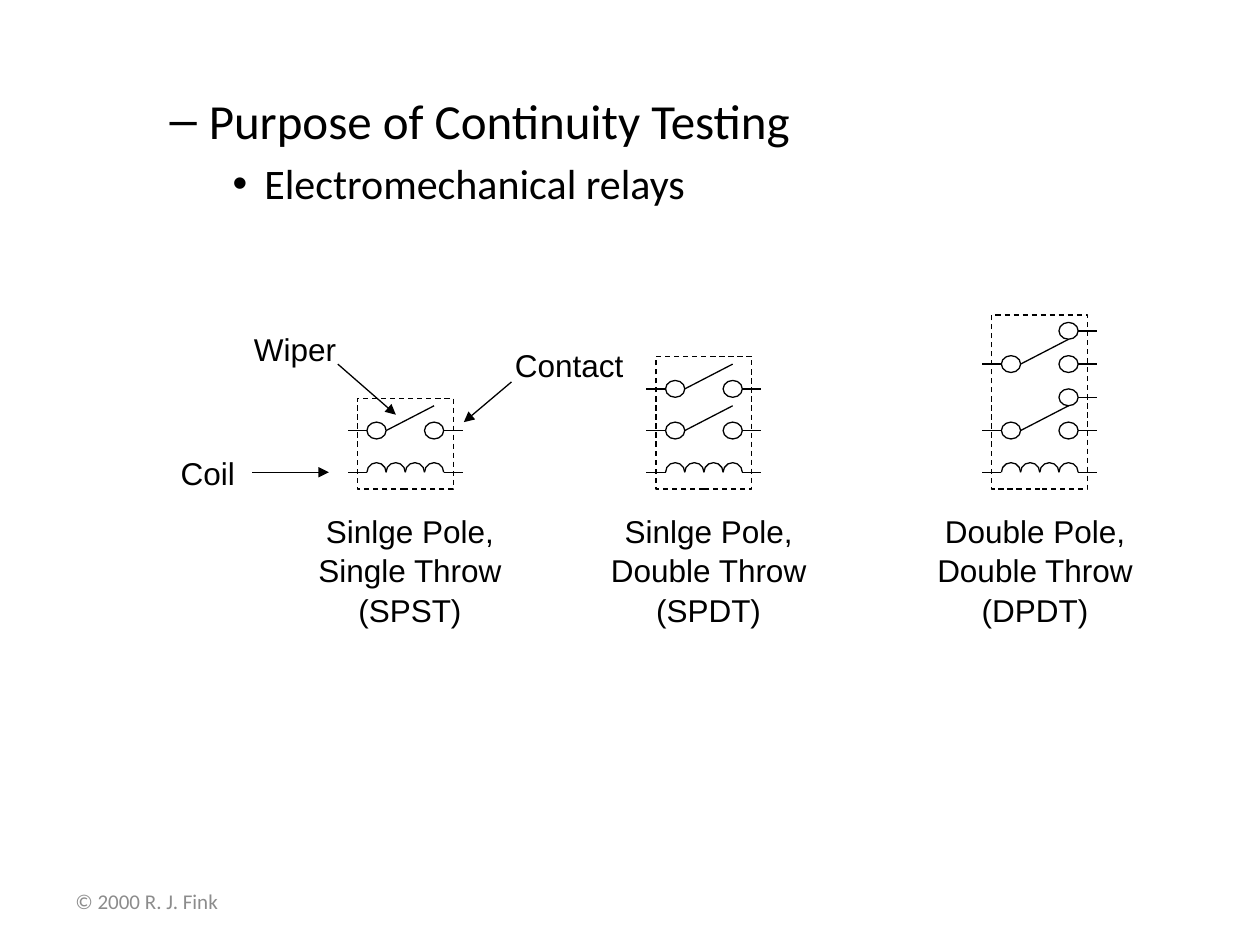
from lxml.etree import SubElement
from pptx import Presentation
from pptx.dml.color import RGBColor
from pptx.enum.dml import MSO_LINE
from pptx.enum.shapes import MSO_CONNECTOR, MSO_SHAPE
from pptx.enum.text import MSO_ANCHOR, PP_ALIGN
from pptx.oxml.ns import qn
from pptx.util import Cm, Pt

BLACK = "000000"
GREY = "8C8C8C"

# Relay geometry in cm; a relay is six units wide
UNIT = 2.32 / 6
RELAY_WIDTH = 6 * UNIT
CASE_BOTTOM = 9.86
COIL_RISE = 0.34       # coil axis above the bottom of the case
POLE_RISE = 1.18       # lowest pole above the bottom of the case
CONTACT_HEIGHT = 0.34
WIPER_RISE = 0.5
THROW_RISE = 0.67      # upper contact above its pole


def rgb(color):
    return RGBColor.from_string(color)


def style_line(line):
    line.color.rgb = rgb(BLACK)
    line.width = Pt(0.75)


def add_line(slide, x1, y1, x2, y2, arrow=False):
    connector = slide.shapes.add_connector(
        MSO_CONNECTOR.STRAIGHT, Cm(x1), Cm(y1), Cm(x2), Cm(y2))
    style_line(connector.line)
    properties = connector._element.spPr
    if arrow:
        SubElement(properties.get_or_add_ln(), qn("a:tailEnd"), type="triangle")
    SubElement(properties, qn("a:effectLst"))


def add_outline(slide, kind, left, top, width, height):
    outline = slide.shapes.add_shape(
        kind, Cm(left), Cm(top), Cm(width), Cm(height))
    outline.shadow.inherit = False
    outline.fill.background()
    style_line(outline.line)
    return outline


def add_text(slide, left, top, width, height, lines, font="Arial", size=18,
             color=BLACK, align=PP_ALIGN.CENTER, space=1):
    frame = slide.shapes.add_textbox(
        Cm(left), Cm(top), Cm(width), Cm(height)).text_frame
    frame.word_wrap = True
    frame.text = "\n".join(lines)
    for paragraph in frame.paragraphs:
        paragraph.alignment = align
        paragraph.space_before = Pt(space)
        paragraph.font.name = font
        paragraph.font.size = Pt(size)
        paragraph.font.color.rgb = rgb(color)
    return frame


def add_contact(slide, left, y):
    add_outline(slide, MSO_SHAPE.OVAL, left, y - CONTACT_HEIGHT / 2,
                UNIT, CONTACT_HEIGHT)


def add_pole(slide, left, y, double_throw):
    """Two contacts with leads and a wiper, plus an upper contact if wanted."""
    add_line(slide, left + UNIT, y, left, y)
    add_contact(slide, left + UNIT, y)
    for contact_y in [y, y - THROW_RISE] if double_throw else [y]:
        add_contact(slide, left + 4 * UNIT, contact_y)
        add_line(slide, left + 5 * UNIT, contact_y, left + 6 * UNIT, contact_y)
    add_line(slide, left + 2 * UNIT, y, left + 4.5 * UNIT, y - WIPER_RISE)


def add_coil(slide, left, y):
    """Four half-circle loops between two leads."""
    add_line(slide, left + UNIT, y, left, y)
    for loop in range(1, 5):
        arc = add_outline(slide, MSO_SHAPE.ARC, left + loop * UNIT,
                          y - UNIT / 2, UNIT, UNIT)
        arc.adjustments[0] = 108  # 180 degrees
        arc.adjustments[1] = 0
    add_line(slide, left + 5 * UNIT, y, left + 6 * UNIT, y)


def add_relay(slide, left, height, poles, pitch, double_throw,
              caption_left, caption):
    for pole in range(poles):
        add_pole(slide, left, CASE_BOTTOM - POLE_RISE - pole * pitch, double_throw)
    add_coil(slide, left, CASE_BOTTOM - COIL_RISE)
    case = add_outline(slide, MSO_SHAPE.RECTANGLE, left + UNIT / 2,
                       CASE_BOTTOM - height, RELAY_WIDTH - UNIT, height)
    case.line.dash_style = MSO_LINE.DASH
    add_text(slide, caption_left, CASE_BOTTOM + 0.33, 4.85, 2.51, caption)


def add_outline_text(slide, left, top, width, height):
    """Topic and subtopic as bulleted lines."""
    levels = [
        ("Purpose of Continuity Testing", 28, "–", 2.06, 0.79, 1.5),
        ("Electromechanical relays", 24, "•", 3.18, 0.64, 4.8),
    ]
    frame = add_text(slide, left, top, width, height,
                     [level[0] for level in levels],
                     font="Calibri", align=PP_ALIGN.LEFT)
    for paragraph, (_, size, bullet, margin, hanging, space) in zip(
            frame.paragraphs, levels):
        paragraph.font.size = Pt(size)
        paragraph.space_before = Pt(space)
        properties = paragraph._p.get_or_add_pPr()
        properties.set("marL", str(Cm(margin)))
        properties.set("indent", str(-Cm(hanging)))
        bullet_font = properties.makeelement(qn("a:buFont"), typeface="Arial")
        bullet_char = properties.makeelement(qn("a:buChar"), char=bullet)
        run_defaults = properties.find(qn("a:defRPr"))
        run_defaults.addprevious(bullet_font)
        run_defaults.addprevious(bullet_char)


def add_callouts(slide):
    """Names of the relay parts, each with an arrow to its part."""
    callouts = [
        ("Contact", (9.53, 6.86, 3.89), (10.31, 7.7, 9.35, 8.51)),
        ("Wiper", (4.5, 6.53, 2.9), (6.81, 7.34, 7.98, 8.36)),
        ("Coil", (2.74, 9.02, 2.9), (5.08, 9.52, 6.63, 9.52)),
    ]
    for name, (left, top, width), arrow in callouts:
        add_text(slide, left, top, width, 1.17, [name])
        add_line(slide, *arrow, arrow=True)


def add_footer(slide, left, top, width, height):
    frame = add_text(slide, left, top, width, height, ["© 2000 R. J. Fink"],
                     "Calibri", 12, GREY, PP_ALIGN.LEFT, 0)
    frame.vertical_anchor = MSO_ANCHOR.MIDDLE


def main():
    deck = Presentation()
    deck.slide_width, deck.slide_height = Cm(25.4), Cm(19.05)
    slide = deck.slides.add_slide(deck.slide_layouts[6])

    add_footer(slide, 1.27, 17.65, 5.92, 1.02)
    add_outline_text(slide, 1.9, 1.7, 21.6, 11.43)

    # Relays: left, case height, poles, pole pitch, double throw, caption
    relays = [
        (7.01, 1.83, 1, 0, False, 5.84,
         ["Sinlge Pole,", "Single Throw", "(SPST)"]),
        (13.03, 2.67, 2, 0.84, False, 11.86,
         ["Sinlge Pole,", "Double Throw", "(SPDT)"]),
        (19.8, 3.51, 2, 1.34, True, 18.44,
         ["Double Pole,", "Double Throw", "(DPDT)"]),
    ]
    for relay in relays:
        add_relay(slide, *relay)

    add_callouts(slide)
    deck.save("out.pptx")


if __name__ == "__main__":
    main()
